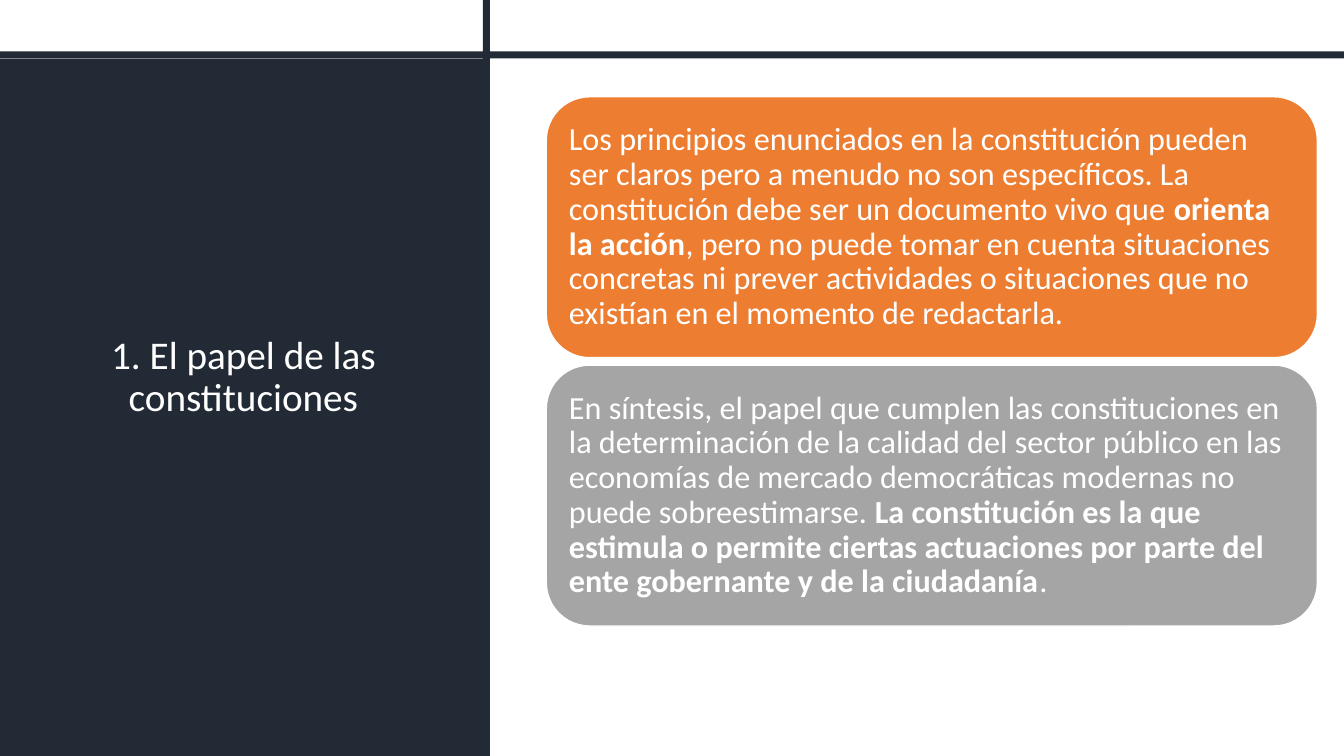
import pptx
import pptx.dml.color
import pptx.enum.shapes
import pptx.enum.text
import pptx.util

Pt = pptx.util.Pt
RGBColor = pptx.dml.color.RGBColor
MSO_SHAPE = pptx.enum.shapes.MSO_SHAPE
PP_ALIGN = pptx.enum.text.PP_ALIGN
MSO_ANCHOR = pptx.enum.text.MSO_ANCHOR

NAVY = RGBColor(0x22, 0x2A, 0x35)
ORANGE = RGBColor(0xED, 0x7D, 0x31)
GREY = RGBColor(0xA5, 0xA5, 0xA5)
WHITE = RGBColor(0xFF, 0xFF, 0xFF)
FONT = "Calibri"

# Card fill and text as (wording, bold) pieces
CARDS = [
    (ORANGE, [
        ("Los principios enunciados en la constitución pueden ser claros pero a "
         "menudo no son específicos. La constitución debe ser un documento vivo "
         "que ", False),
        ("orienta la acción", True),
        (", pero no puede tomar en cuenta situaciones concretas ni prever "
         "actividades o situaciones que no existían en el momento de "
         "redactarla.", False),
    ]),
    (GREY, [
        ("En síntesis, el papel que cumplen las constituciones en la "
         "determinación de la calidad del sector público en las economías de "
         "mercado democráticas modernas no puede sobreestimarse. ", False),
        ("La constitución es la que estimula o permite ciertas actuaciones por "
         "parte del ente gobernante y de la ciudadanía", True),
        (".", False),
    ]),
]
CARD_TOP = 69.1
CARD_HEIGHT = 186.4
CARD_STEP = 191.7


def add_block(s, kind, left, top, width, height, color):
    sp = s.shapes.add_shape(kind, Pt(left), Pt(top), Pt(width), Pt(height))
    sp.shadow.inherit = False
    sp.fill.solid()
    sp.fill.fore_color.rgb = color
    sp.line.fill.background()
    return sp


def format_run(r, size, bold=False):
    r.font.name = FONT
    r.font.size = Pt(size)
    r.font.bold = bold
    r.font.color.rgb = WHITE


def set_title(s, text):
    sp = s.shapes.title
    # Bring the title in front of the dark panel
    s.shapes._spTree.append(sp._element)
    sp.left, sp.top, sp.width, sp.height = Pt(47.5), Pt(60.5), Pt(252.7), Pt(419)
    tf = sp.text_frame
    tf.text = text
    tf.word_wrap = True
    tf.vertical_anchor = MSO_ANCHOR.MIDDLE
    p = tf.paragraphs[0]
    p.alignment = PP_ALIGN.CENTER
    p.line_spacing = 0.9
    format_run(p.runs[0], 28)


def add_card(s, top, color, pieces):
    sp = add_block(s, MSO_SHAPE.ROUNDED_RECTANGLE, 390.2, top, 550.8,
                   CARD_HEIGHT, color)
    sp.line.color.rgb = WHITE
    sp.line.width = Pt(1)
    tf = sp.text_frame
    tf.word_wrap = True
    tf.vertical_anchor = MSO_ANCHOR.MIDDLE
    tf.margin_left = tf.margin_right = tf.margin_top = tf.margin_bottom = Pt(7.2)
    p = tf.paragraphs[0]
    p.alignment = PP_ALIGN.LEFT
    p.line_spacing = 0.9
    for text, bold in pieces:
        r = p.add_run()
        r.text = text
        format_run(r, 23, bold)


def main():
    prs = pptx.Presentation()
    prs.slide_width, prs.slide_height = Pt(960), Pt(540)
    s = prs.slides.add_slide(prs.slide_layouts[5])

    # Dark panel with the title
    add_block(s, MSO_SHAPE.RECTANGLE, 0, 41.8, 350, 498.2, NAVY)
    set_title(s, "1. El papel de las constituciones")

    # Crossing bars
    add_block(s, MSO_SHAPE.RECTANGLE, 345, 0, 5, 540, NAVY)
    add_block(s, MSO_SHAPE.RECTANGLE, 0, 36.8, 960, 5, NAVY)

    # Text cards
    for i, (color, pieces) in enumerate(CARDS):
        add_card(s, CARD_TOP + i * CARD_STEP, color, pieces)

    prs.save("out.pptx")


if __name__ == "__main__":
    main()
